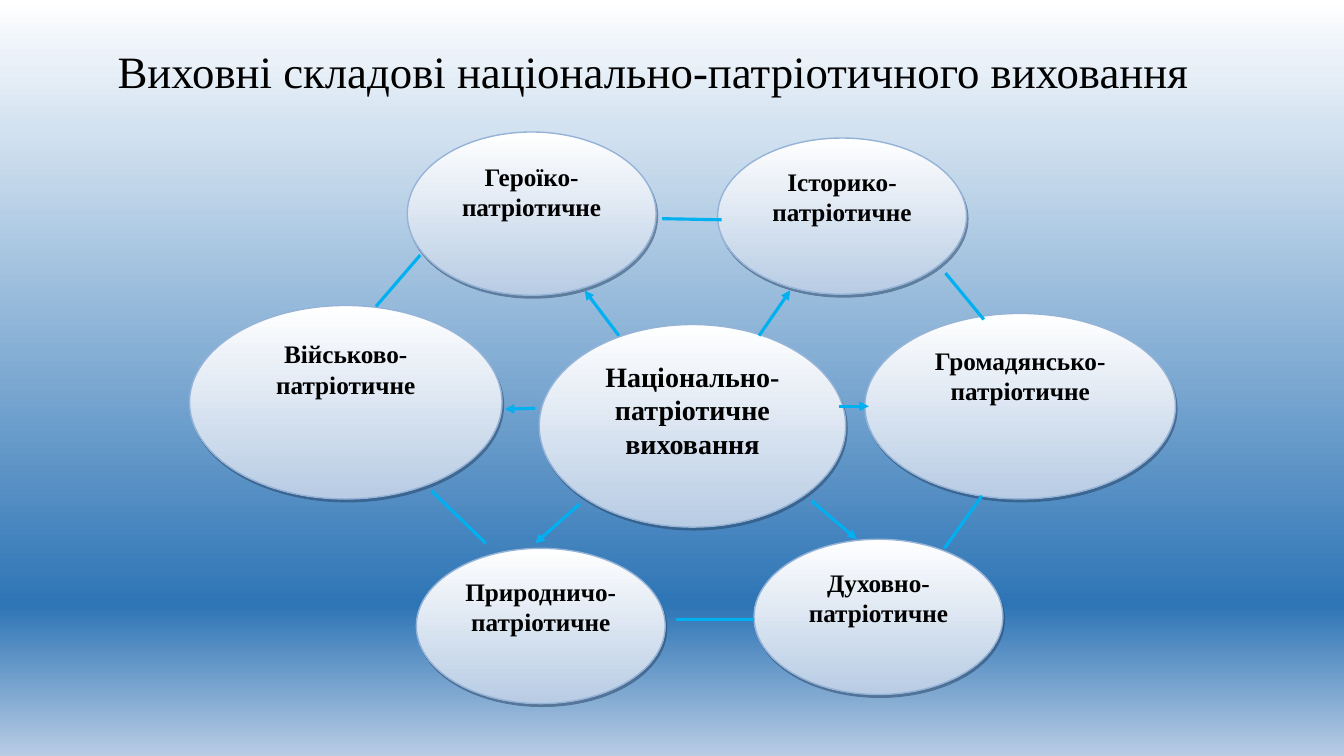
from dataclasses import dataclass

from lxml import etree
from pptx import Presentation
from pptx import util as u
from pptx.dml.color import RGBColor
from pptx.enum import shapes, text
from pptx.oxml import ns


@dataclass(frozen=True)
class Theme:
    font: str = "Times New Roman"
    ink: str = "000000"
    outline: str = "95B3D7"
    shadow: str = "243F60"
    link: str = "00B0F0"
    title_size: float = 32
    center_size: float = 20
    part_size: float = 18
    outline_width: float = 1
    link_width: float = 2.25
    background: tuple = ((0, "FFFFFF"), (8, "EAF1F8"), (17, "D3E2F0"),
                         (80, "2E75B6"), (100, "B8CCE4"))
    bubble: tuple = ((0, "FFFFFF"), (100, "B8CCE4"))


@dataclass(frozen=True)
class Bubble:
    label: str
    left: float
    top: float
    width: float
    height: float
    size: float


@dataclass(frozen=True)
class Link:
    x1: float
    y1: float
    x2: float
    y2: float
    arrow: bool = False


THEME = Theme()
SMALL = 177.8  # width shared by the four smaller ellipses

BUBBLES = [
    Bubble("Духовно-патріотичне", 538.6, 385.2, SMALL, 110.9, THEME.part_size),
    Bubble("Природничо-патріотичне", 297.4, 391.7, SMALL, 110.9, THEME.part_size),
    Bubble("Громадянсько- патріотичне", 617.8, 223.9, 221.8, 132.5, THEME.part_size),
    Bubble("Національно-патріотичне виховання", 385.2, 231.8, 218.9, 144.7,
           THEME.center_size),
    Bubble("Військово-патріотичне", 135.4, 218.2, 223.2, 138.2, THEME.part_size),
    Bubble("Історико-патріотичне", 512.6, 98.6, SMALL, 111.6, THEME.part_size),
    Bubble("Героїко-патріотичне", 290.9, 94.3, SMALL, 116.6, THEME.part_size),
]

LINKS = [
    # Ring between neighbouring parts
    Link(268.6, 218.9, 300.2, 182.2),
    Link(473, 156.2, 515.5, 157),
    Link(675.4, 195.1, 702.7, 228.2),
    Link(701.3, 354.2, 674.6, 391.7),
    Link(483.1, 442.8, 538.6, 442.8),
    Link(308.2, 350.6, 347, 388.1),
    # Arrows from the centre to the parts
    Link(442.1, 239.8, 417.6, 207.4, True),
    Link(542.2, 239.8, 564.5, 207.4, True),
    Link(599, 290.2, 620.6, 290.2, True),
    Link(579.6, 357.8, 612, 385.2, True),
    Link(414, 360, 382.3, 388.1, True),
    Link(382.3, 291.6, 360.7, 292.3, True),
]


def add_node(parent, tag: str, **attrs: str):
    return etree.SubElement(parent, ns.qn(tag), attrs)


def add_color(parent, color: str):
    return add_node(parent, "a:srgbClr", val=color)


def set_gradient(fill, element, stops: tuple) -> None:
    """Fill from top to bottom with the given (percent, colour) stops."""
    fill.gradient()
    fill.gradient_angle = 270
    stop_list = element.find(".//" + ns.qn("a:gsLst"))
    for stop in list(stop_list):
        stop_list.remove(stop)
    for percent, color in stops:
        add_color(add_node(stop_list, "a:gs", pos=str(percent * 1000)), color)


def add_text(tf, content: str, size: float, bold: bool = False):
    tf.word_wrap = True
    p = tf.paragraphs[0]
    p.alignment = text.PP_ALIGN.CENTER
    r = p.add_run()
    r.text = content
    r.font.name = THEME.font
    r.font.size = u.Pt(size)
    r.font.bold = bold
    r.font.color.rgb = RGBColor.from_string(THEME.ink)
    return p


def add_title(s, content: str) -> None:
    tf = s.shapes.add_textbox(u.Pt(39.6), u.Pt(28.8), u.Pt(854.6), u.Pt(48.2)).text_frame
    tf.vertical_anchor = text.MSO_ANCHOR.MIDDLE
    add_text(tf, content, THEME.title_size).line_spacing = 0.9


def add_bubble(s, b: Bubble) -> None:
    sp = s.shapes.add_shape(shapes.MSO_SHAPE.OVAL, u.Pt(b.left), u.Pt(b.top),
                            u.Pt(b.width), u.Pt(b.height))
    set_gradient(sp.fill, sp.element.spPr, THEME.bubble)
    sp.line.color.rgb = RGBColor.from_string(THEME.outline)
    sp.line.width = u.Pt(THEME.outline_width)
    # Hard offset shadow
    sp.shadow.inherit = False
    effects = sp.element.spPr.find(ns.qn("a:effectLst"))
    shadow = add_node(effects, "a:outerShdw", blurRad="0", dist=str(u.Pt(2.2)),
                      dir=str(63 * 60000), algn="ctr", rotWithShape="0")
    add_node(add_color(shadow, THEME.shadow), "a:alpha", val="50000")
    sp.text_frame.vertical_anchor = text.MSO_ANCHOR.TOP
    add_text(sp.text_frame, b.label, b.size, bold=True)


def add_link(s, link: Link) -> None:
    cx = s.shapes.add_connector(shapes.MSO_CONNECTOR.STRAIGHT, u.Pt(link.x1),
                                u.Pt(link.y1), u.Pt(link.x2), u.Pt(link.y2))
    cx.line.color.rgb = RGBColor.from_string(THEME.link)
    cx.line.width = u.Pt(THEME.link_width)
    if link.arrow:
        add_node(cx.line._get_or_add_ln(), "a:tailEnd", type="triangle")
    add_node(cx.element.spPr, "a:effectLst")


def main() -> None:
    prs = Presentation()
    prs.slide_width, prs.slide_height = u.Pt(960), u.Pt(540)
    s = prs.slides.add_slide(prs.slide_layouts[6])

    # Background and heading
    set_gradient(s.background.fill, s.element, THEME.background)
    add_title(s, "Виховні складові національно-патріотичного виховання")

    # Diagram
    for bubble in BUBBLES:
        add_bubble(s, bubble)
    for link in LINKS:
        add_link(s, link)

    prs.save("out.pptx")


if __name__ == "__main__":
    main()
